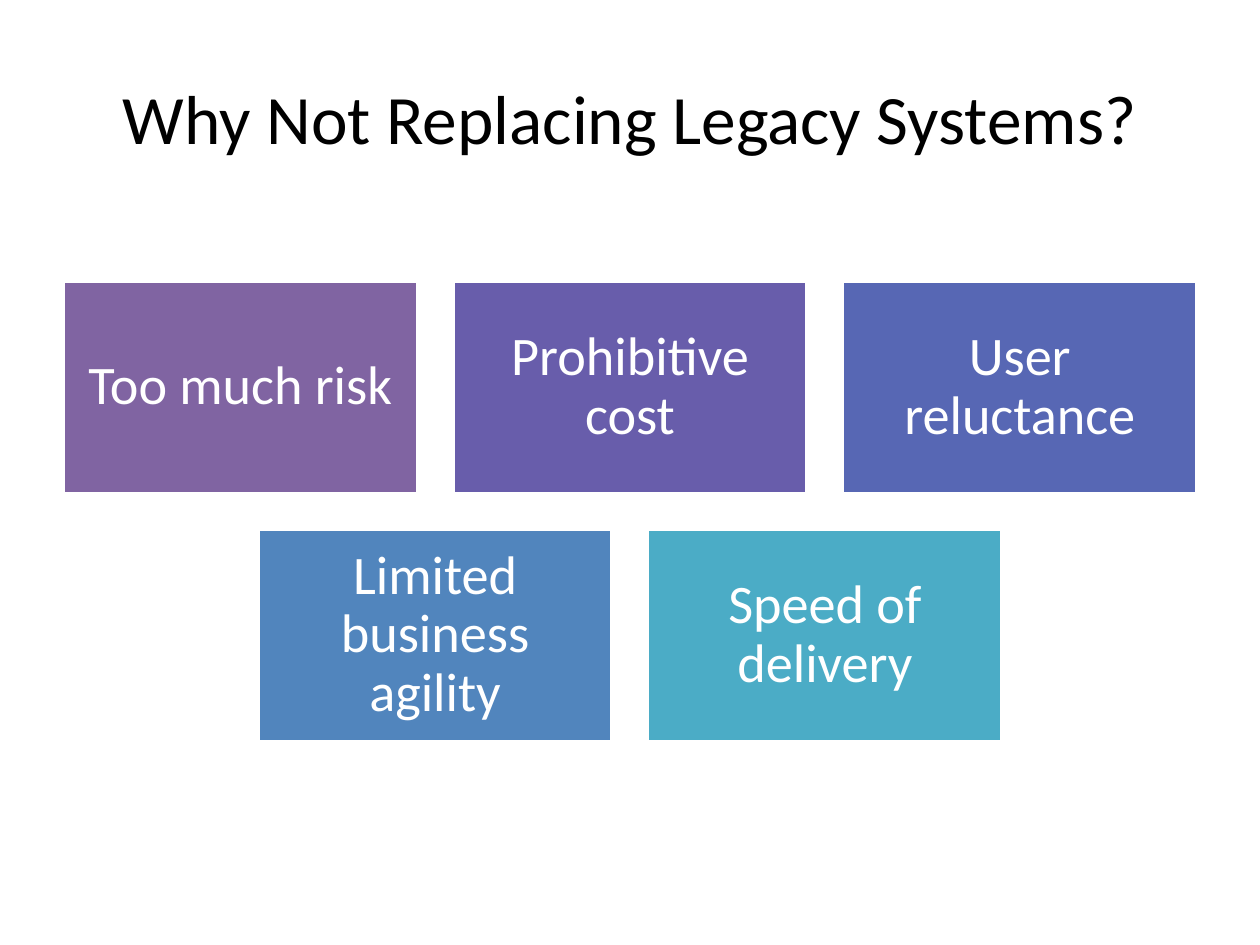
import pptx
import pptx.util
import pptx.dml.color
import pptx.enum.shapes
import pptx.enum.text
from dataclasses import dataclass

Pt = pptx.util.Pt
RGB = pptx.dml.color.RGBColor.from_string


@dataclass(frozen=True)
class Theme:
    font: str = "Calibri"
    title_size: float = 39.6
    card_size: float = 31
    text: str = "000000"
    light: str = "FFFFFF"
    cards: tuple = ("8064A2", "685DAB", "5767B4", "5185BD", "4BACC6")


THEME = Theme()
REASONS = ("Too much risk", "Prohibitive cost", "User reluctance",
           "Limited business agility", "Speed of delivery")


def write_text(tf, text, *, size, color, spacing=1.0, inset=None):
    """Fill a text frame with one centred paragraph."""
    tf.word_wrap = True
    tf.auto_size = pptx.enum.text.MSO_AUTO_SIZE.NONE
    tf.vertical_anchor = pptx.enum.text.MSO_ANCHOR.MIDDLE
    if inset is not None:
        tf.margin_left = tf.margin_right = Pt(inset)
        tf.margin_top = tf.margin_bottom = Pt(inset)
    p = tf.paragraphs[0]
    p.alignment = pptx.enum.text.PP_ALIGN.CENTER
    p.line_spacing = spacing
    r = p.add_run()
    r.text = text
    r.font.name = THEME.font
    r.font.size = Pt(size)
    r.font.color.rgb = RGB(color)


def place_title(s, text, left, top, width, height):
    sp = s.shapes.title
    sp.left, sp.top, sp.width, sp.height = map(Pt, (left, top, width, height))
    write_text(sp.text_frame, text, size=THEME.title_size, color=THEME.text)


def add_card(s, text, fill, left, top, width, height):
    sp = s.shapes.add_shape(pptx.enum.shapes.MSO_SHAPE.RECTANGLE,
                            *map(Pt, (left, top, width, height)))
    sp.shadow.inherit = False
    sp.fill.solid()
    sp.fill.fore_color.rgb = RGB(fill)
    sp.line.color.rgb = RGB(THEME.light)
    sp.line.width = Pt(2)
    write_text(sp.text_frame, text, size=THEME.card_size, color=THEME.light,
               spacing=0.9, inset=9.3)


def add_card_grid(s, texts, left, top, width, height, columns=3):
    """Centre rows of 5:3 cards in the box, with gaps a tenth of a card wide."""
    card_w = width / (columns + 0.1 * (columns - 1))
    card_h = card_w * 0.6
    gap = card_w * 0.1
    cards = list(zip(texts, THEME.cards))
    rows = [cards[i:i + columns] for i in range(0, len(cards), columns)]
    y = top + (height - len(rows) * (card_h + gap) + gap) / 2
    for row in rows:
        x = left + (width - len(row) * (card_w + gap) + gap) / 2
        for text, fill in row:
            add_card(s, text, fill, x, y, card_w, card_h)
            x += card_w + gap
        y += card_h + gap


def main():
    prs = pptx.Presentation()
    prs.slide_width, prs.slide_height = Pt(720), Pt(540)
    s = prs.slides.add_slide(prs.slide_layouts.get_by_name("Title Only"))
    place_title(s, "Why Not Replacing Legacy Systems?", 36, 21.6, 648, 90)
    add_card_grid(s, REASONS, 36, 114, 648, 356.4)
    prs.save("out.pptx")


if __name__ == "__main__":
    main()
